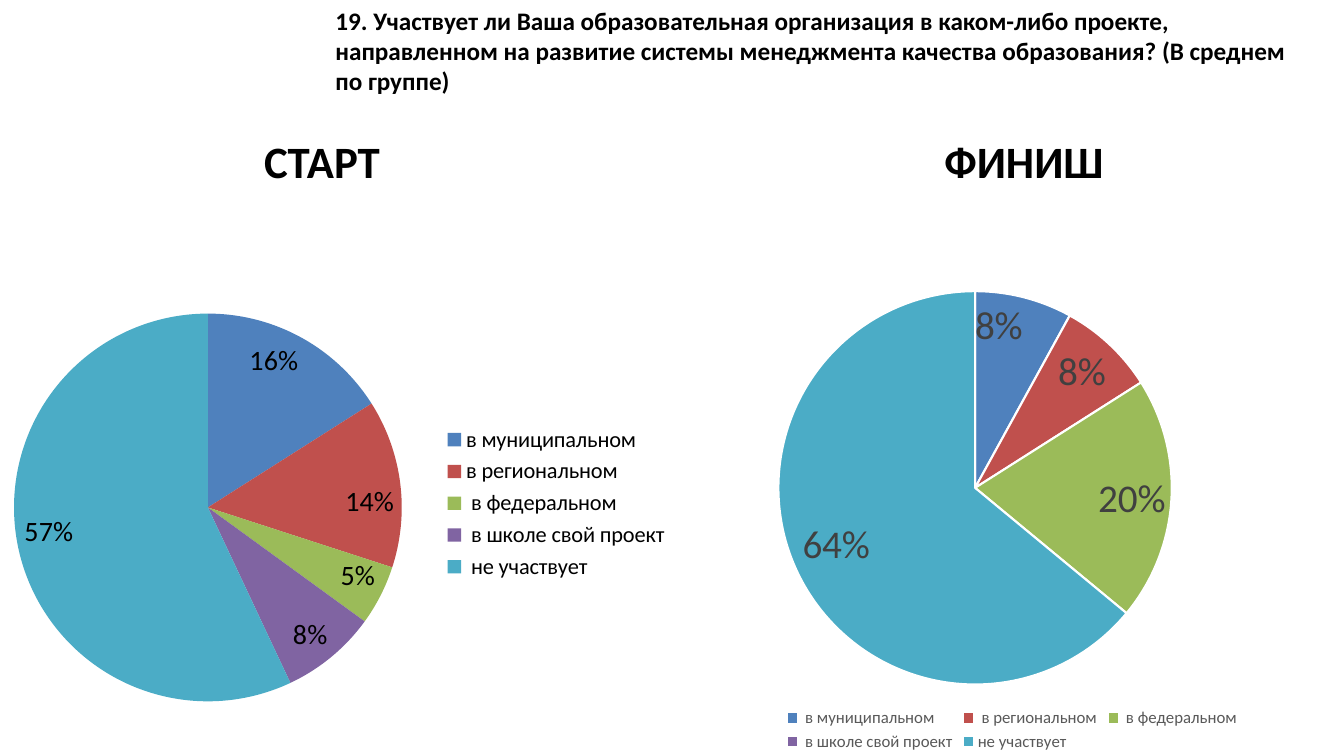
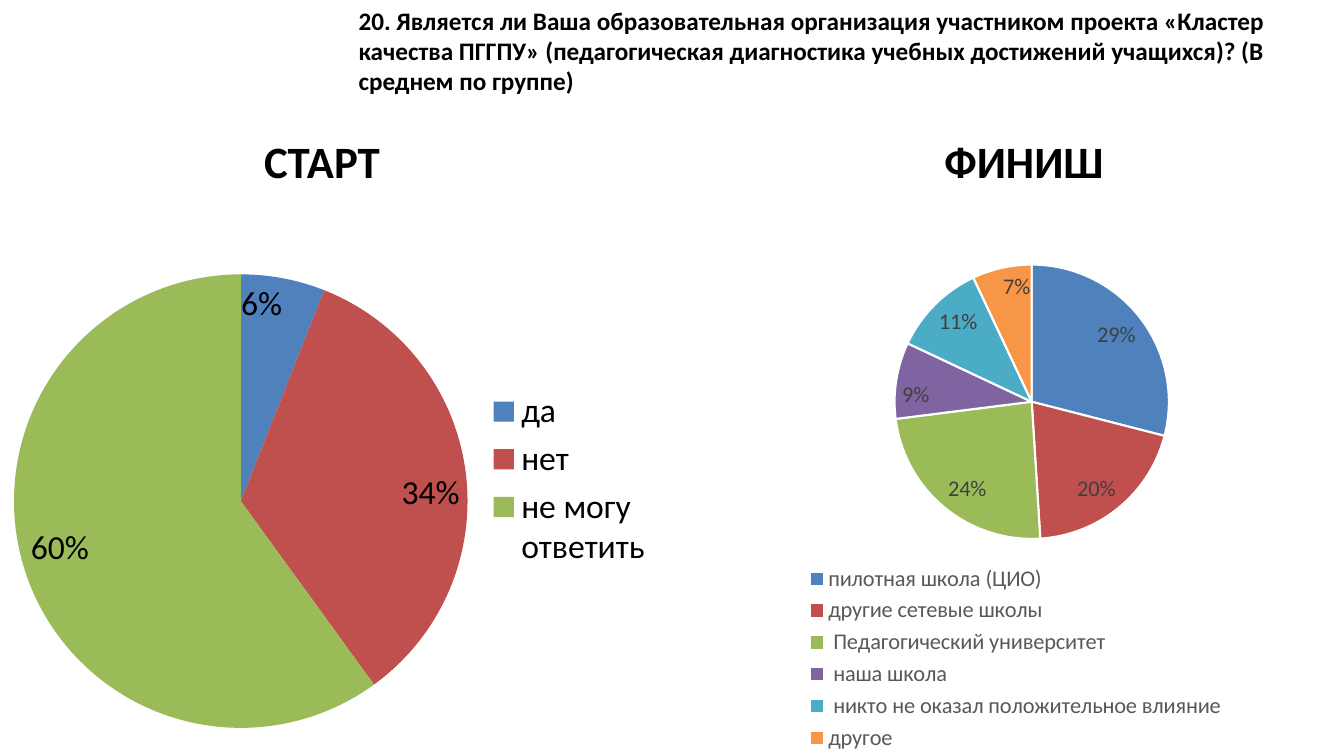
import pptx
import pptx.chart.data
import pptx.dml.color
import pptx.enum.chart
import pptx.enum.text
import pptx.oxml
import pptx.oxml.ns
import pptx.util

Pt = pptx.util.Pt
FONT = "Calibri"
HEX = {
    "black": "000000", "white": "FFFFFF", "label": "404040", "legend": "595959",
    "blue": "4F81BD", "red": "C0504D", "green": "9BBB59",
    "purple": "8064A2", "teal": "4BACC6", "orange": "F79646",
}
RGB = {name: pptx.dml.color.RGBColor.from_string(code) for name, code in HEX.items()}
WEDGES = ["blue", "red", "green", "purple", "teal", "orange"]
RIGHT = pptx.enum.chart.XL_LEGEND_POSITION.RIGHT
BOTTOM = pptx.enum.chart.XL_LEGEND_POSITION.BOTTOM

# Headings on every slide: text, left, width
HEADS = [("СТАРТ", 181.5, 98), ("ФИНИШ", 667.5, 129.5)]

# Each pie: box (left, top, width, height), disc (left, top, side), text sizes, data
PAGES = [
    {
        "title": "19. Участвует ли Ваша образовательная организация в каком-либо проекте, "
                 "направленном на развитие системы менеджмента качества образования? "
                 "(В среднем по группе)",
        "left": 232.5, "width": 697.5,
        "start": {
            "box": (0, 179, 486, 361), "disc": (10, 224, 277), "key": 16, "size": 20,
            "data": {"в муниципальном": 16, "в региональном": 14, " в федеральном": 5,
                     " в школе свой проект": 8, " не участвует": 57},
        },
        "end": {
            "box": (486, 162, 474, 378), "disc": (556, 208, 281), "key": 12, "size": 28,
            "data": {" в муниципальном": 8, " в региональном": 8, " в федеральном": 20,
                     " в школе свой проект": 0, "не участвует": 64},
        },
    },
    {
        "title": "20. Является ли Ваша образовательная организация участником проекта "
                 "«Кластер качества ПГГПУ» (педагогическая диагностика учебных достижений "
                 "учащихся)? (В среднем по группе)",
        "left": 249, "width": 711,
        "start": {
            "box": (0, 145.5, 474.5, 394.5), "disc": (10, 196, 324), "key": 24, "size": 24,
            "data": {"да": 6, "нет": 34, "не могу ответить": 60},
        },
        "end": {
            "box": (491, 157, 469, 383), "disc": (639, 189, 196), "key": 16, "size": 16,
            "data": {"пилотная школа (ЦИО)": 29, "другие сетевые школы": 20,
                     " Педагогический университет": 24, " наша школа": 9,
                     " никто не оказал положительное влияние": 11, "другое": 7},
        },
    },
]


def add_text(slide, text, box, size, wrap):
    frame = slide.shapes.add_textbox(*map(Pt, box)).text_frame
    frame.word_wrap = wrap
    frame.auto_size = pptx.enum.text.MSO_AUTO_SIZE.SHAPE_TO_FIT_TEXT
    frame.text = text
    font = frame.paragraphs[0].runs[0].font
    font.name, font.size, font.bold = FONT, Pt(size), True
    font.color.rgb = RGB["black"]


def add_pie(slide, pie, place, key_color, label_color, edge):
    data = pptx.chart.data.CategoryChartData()
    data.categories = list(pie["data"])
    data.add_series("Series 1", list(pie["data"].values()))
    kind = pptx.enum.chart.XL_CHART_TYPE.PIE
    chart = slide.shapes.add_chart(kind, *map(Pt, pie["box"]), data).chart
    chart.has_title = False
    chart.font.name, chart.font.size = FONT, Pt(10)
    chart.font.color.rgb = RGB["black"]

    # Legend
    chart.has_legend = True
    chart.legend.position = place
    chart.legend.include_in_layout = False
    font = chart.legend.font
    font.name, font.size = FONT, Pt(pie["key"])
    font.color.rgb = RGB[key_color]

    # Wedges
    plot = chart.plots[0]
    plot.vary_by_categories = True
    for index in range(len(pie["data"])):
        style = plot.series[0].points[index].format
        style.fill.solid()
        style.fill.fore_color.rgb = RGB[WEDGES[index]]
        if edge:
            style.line.color.rgb = RGB["white"]
            style.line.width = Pt(1.5)
        else:
            style.line.fill.background()

    # Percent labels, blank for an empty wedge
    plot.has_data_labels = True
    labels = plot.data_labels
    labels.show_percentage = True
    labels.show_value = False
    labels.number_format = "0%;;"
    labels.number_format_is_linked = False
    labels.position = pptx.enum.chart.XL_LABEL_POSITION.INSIDE_END
    labels.font.name, labels.font.size = FONT, Pt(pie["size"])
    labels.font.color.rgb = RGB[label_color]

    # Place of the disc as shares of the chart box
    left, top, width, height = pie["box"]
    x, y, side = pie["disc"]
    shares = {"x": (x - left) / width, "y": (y - top) / height,
              "w": side / width, "h": side / height}
    parts = "".join(f'<c:{tag} val="{share:.4f}"/>' for tag, share in shares.items())
    area = chart._chartSpace.chart.plotArea
    for old in area.findall(pptx.oxml.ns.qn("c:layout")):
        area.remove(old)
    area.insert(0, pptx.oxml.parse_xml(
        f'<c:layout {pptx.oxml.ns.nsdecls("c")}><c:manualLayout>'
        '<c:layoutTarget val="inner"/><c:xMode val="edge"/><c:yMode val="edge"/>'
        f'{parts}</c:manualLayout></c:layout>'))


deck = pptx.Presentation()
deck.slide_width, deck.slide_height = Pt(960), Pt(540)

for page in PAGES:
    slide = deck.slides.add_slide(deck.slide_layouts[6])
    # Question and headings
    add_text(slide, page["title"], (page["left"], 0, page["width"], 94), 18, True)
    for head, left, width in HEADS:
        add_text(slide, head, (left, 92, width, 46), 32, False)
    # Pies before and after
    add_pie(slide, page["start"], RIGHT, "black", "black", False)
    add_pie(slide, page["end"], BOTTOM, "legend", "label", True)

deck.save("out.pptx")
